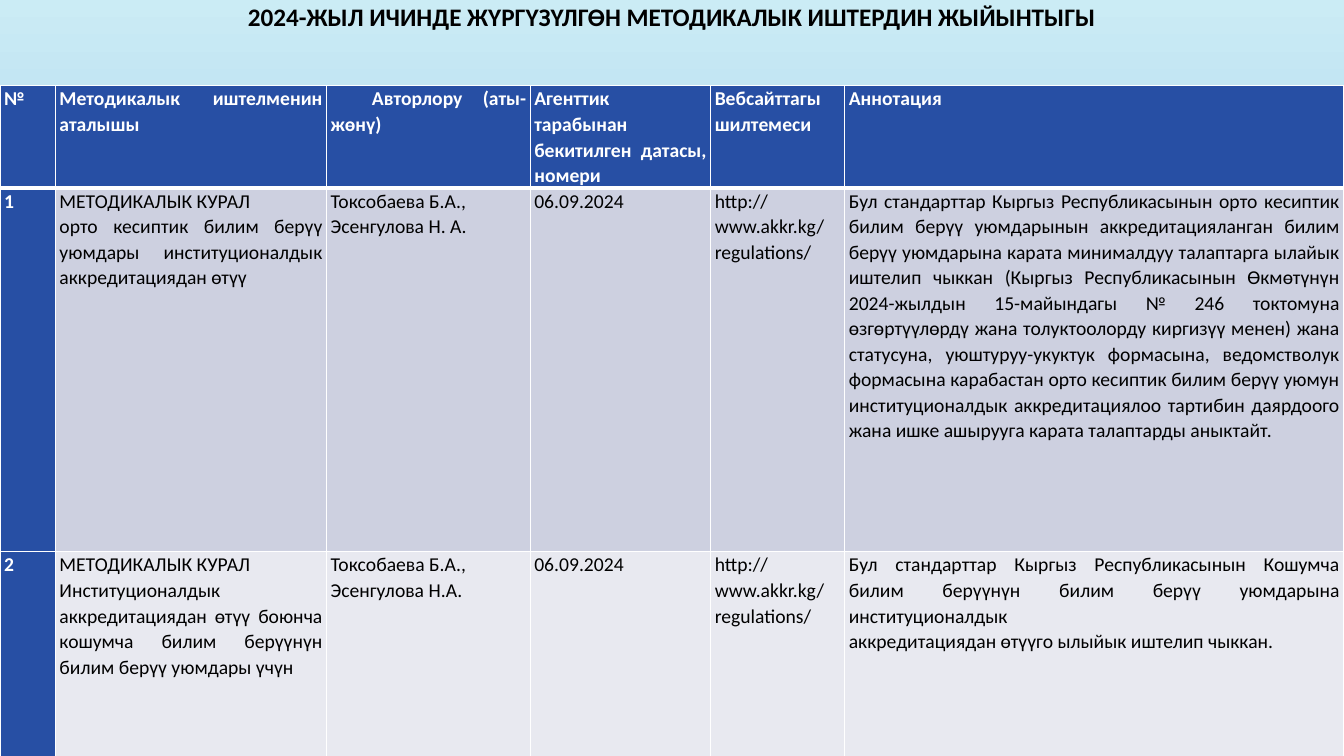
from dataclasses import dataclass

from lxml import etree
from pptx import Presentation
from pptx.dml.color import RGBColor
from pptx.enum.text import MSO_ANCHOR, PP_ALIGN
from pptx.oxml.ns import qn
from pptx.util import Inches, Pt

CENTER, JUSTIFY = PP_ALIGN.CENTER, PP_ALIGN.JUSTIFY
TOP = MSO_ANCHOR.TOP
TITLE_ONLY = 5


@dataclass(frozen=True)
class Theme:
    """Colours, type sizes and line widths of the slide."""

    font: str = "Calibri"
    title_size: float = 18
    table_size: float = 14
    ink: str = "000000"
    white: str = "FFFFFF"
    accent: str = "274FA4"
    bands: tuple = ("CDD0E0", "E8E9F0")
    sky: tuple = ("CBECF5", "73ABDD")
    thin: float = 1
    thick: float = 3


THEME = Theme()
TITLE = "2024-ЖЫЛ ИЧИНДЕ ЖҮРГҮЗҮЛГӨН МЕТОДИКАЛЫК ИШТЕРДИН ЖЫЙЫНТЫГЫ"
COLUMN_WIDTHS = (0.55, 2.69, 2.02, 1.79, 1.33, 4.95)
ROW_HEIGHTS = (0.95, 3.61, 2.09)
AUTHORS_COLUMN = 2
AUTHORS_INDENT = 0.41
APPROVED = "06.09.2024"
WEB_LINK = "http://www.akkr.kg/regulations/"
WORKS = (
    (
        "№",
        "Методикалык иштелменин аталышы",
        "Авторлору (аты-жөнү)",
        "Агенттик тарабынан бекитилген датасы, номери",
        "Вебсайттагы шилтемеси",
        "Аннотация",
    ),
    (
        "1",
        "МЕТОДИКАЛЫК КУРАЛ\n"
        "орто кесиптик билим берүү уюмдары институционалдык аккредитациядан өтүү",
        "Токсобаева Б.А.,\nЭсенгулова Н. А.",
        APPROVED,
        WEB_LINK,
        "Бул стандарттар Кыргыз Республикасынын орто кесиптик билим берүү "
        "уюмдарынын аккредитацияланган билим берүү уюмдарына карата минималдуу "
        "талаптарга ылайык иштелип чыккан (Кыргыз Республикасынын Өкмөтүнүн "
        "2024-жылдын 15-майындагы № 246 токтомуна өзгөртүүлөрдү жана "
        "толуктоолорду киргизүү менен) жана статусуна, уюштуруу-укуктук "
        "формасына, ведомстволук формасына карабастан орто кесиптик билим берүү "
        "уюмун институционалдык аккредитациялоо тартибин даярдоого жана ишке "
        "ашырууга карата талаптарды аныктайт.",
    ),
    (
        "2",
        "МЕТОДИКАЛЫК КУРАЛ\n"
        "Институционалдык аккредитациядан өтүү боюнча кошумча билим берүүнүн "
        "билим берүү уюмдары үчүн",
        "Токсобаева Б.А.,\nЭсенгулова Н.А.",
        APPROVED,
        WEB_LINK,
        "Бул стандарттар Кыргыз Республикасынын Кошумча билим берүүнүн билим "
        "берүү уюмдарына институционалдык\n"
        "аккредитациядан өтүүго ылыйык иштелип чыккан.",
    ),
)


def apply(target, values):
    """Set every attribute of a dict on the target."""
    for name, value in values.items():
        setattr(target, name, value)


def format_paragraph(paragraph, size, color, bold, alignment, spacing):
    """Give a paragraph its font, alignment and line spacing."""
    apply(paragraph, {"alignment": alignment, "line_spacing": spacing})
    apply(paragraph.font, {"name": THEME.font, "size": Pt(size), "bold": bold})
    paragraph.font.color.rgb = RGBColor.from_string(color)


def paint_background(slide):
    """Fill the slide with a vertical gradient."""
    fill = slide.background.fill
    fill.gradient()
    fill.gradient_angle = 270
    for stop, color in zip(fill.gradient_stops, THEME.sky):
        stop.color.rgb = RGBColor.from_string(color)


def add_title(slide):
    """Place and format the title."""
    title = slide.shapes.title
    apply(title, {"left": Inches(1), "top": Inches(0),
                  "width": Inches(11.33), "height": Inches(1.01)})
    frame = title.text_frame
    frame.text = TITLE
    apply(frame, {"word_wrap": True, "vertical_anchor": TOP,
                  "margin_top": Inches(0.05)})
    format_paragraph(frame.paragraphs[0], THEME.title_size, THEME.ink,
                     True, CENTER, 0.9)


def draw_borders(cell, row):
    """Outline a cell, with a thick rule under the header."""
    widths = {
        "lnL": THEME.thin,
        "lnR": THEME.thin,
        "lnT": THEME.thick if row == 1 else THEME.thin,
        "lnB": THEME.thick if row == 0 else THEME.thin,
    }
    properties = cell._tc.get_or_add_tcPr()
    for side, width in widths.items():
        line = etree.SubElement(properties, qn(f"a:{side}"), w=str(Pt(width)))
        solid = etree.SubElement(line, qn("a:solidFill"))
        etree.SubElement(solid, qn("a:srgbClr"), val=THEME.white)


def fill_cell(cell, row, column, text):
    """Write and format one table cell."""
    heading = row == 0 or column == 0
    apply(cell, {"text": text, "vertical_anchor": TOP,
                 "margin_left": Inches(0.04), "margin_right": Inches(0.04),
                 "margin_top": 0, "margin_bottom": 0})
    draw_borders(cell, row)
    cell.fill.solid()
    background = THEME.accent if heading else THEME.bands[row - 1]
    cell.fill.fore_color.rgb = RGBColor.from_string(background)
    for paragraph in cell.text_frame.paragraphs:
        format_paragraph(paragraph, THEME.table_size,
                         THEME.white if heading else THEME.ink,
                         heading, JUSTIFY, 1.07)


def add_works_table(slide):
    """Add the table of methodical works."""
    table = slide.shapes.add_table(
        len(ROW_HEIGHTS), len(COLUMN_WIDTHS), Inches(0), Inches(0.85),
        Inches(sum(COLUMN_WIDTHS)), Inches(sum(ROW_HEIGHTS))).table
    for column, width in zip(table.columns, COLUMN_WIDTHS):
        column.width = Inches(width)
    for row, height in zip(table.rows, ROW_HEIGHTS):
        row.height = Inches(height)
    for row, work in enumerate(WORKS):
        for column, text in enumerate(work):
            fill_cell(table.cell(row, column), row, column, text)
    authors_heading = table.cell(0, AUTHORS_COLUMN).text_frame.paragraphs[0]
    authors_heading._p.get_or_add_pPr().set(
        "indent", str(Inches(AUTHORS_INDENT)))


def main():
    """Build and save the slide."""
    deck = Presentation()
    apply(deck, {"slide_width": Inches(13.33), "slide_height": Inches(7.5)})
    slide = deck.slides.add_slide(deck.slide_layouts[TITLE_ONLY])
    paint_background(slide)
    add_title(slide)
    add_works_table(slide)
    deck.save("out.pptx")


if __name__ == "__main__":
    main()
